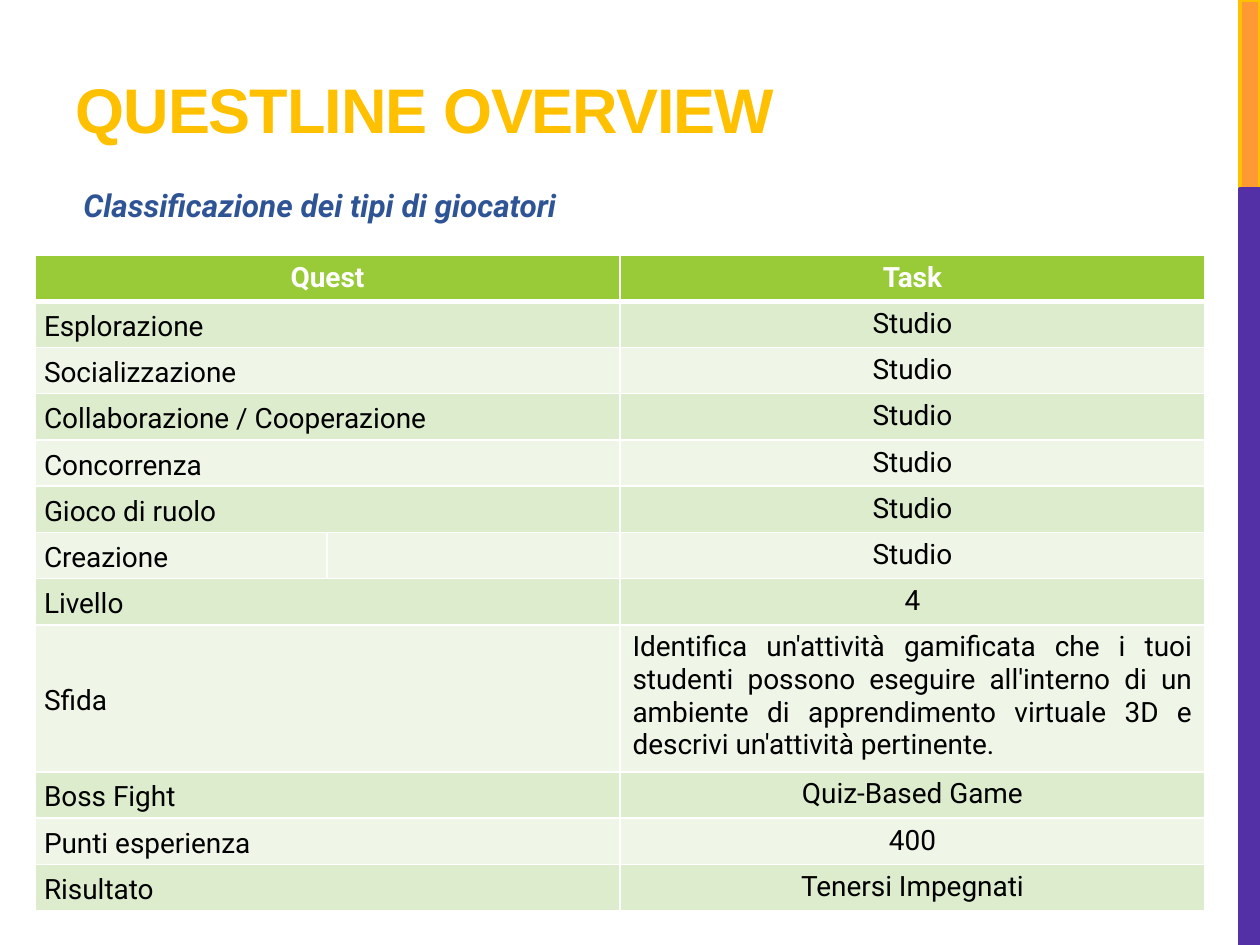
"""Build the questline overview slide with its quest and task table."""
from lxml import etree
from pptx import Presentation, util as u
from pptx.dml.color import RGBColor
from pptx.enum import shapes, text
from pptx.oxml.ns import qn

PX = 914400 // 126
GOLD = RGBColor(0xFF, 0xC0, 0x00)
ORANGE = RGBColor(0xFF, 0x99, 0x33)
PURPLE = RGBColor(0x53, 0x30, 0xA5)
NAVY = RGBColor(0x2F, 0x54, 0x96)
GREEN = RGBColor(0x99, 0xCB, 0x38)
BANDS = [RGBColor(0xEF, 0xF6, 0xE8), RGBColor(0xDE, 0xEC, 0xCE)]
WHITE = RGBColor(0xFF, 0xFF, 0xFF)
BLACK = RGBColor(0x00, 0x00, 0x00)

ROWS = [
    ("Quest", "Task"),
    ("Esplorazione", "Studio"),
    ("Socializzazione", "Studio"),
    ("Collaborazione / Cooperazione", "Studio"),
    ("Concorrenza", "Studio"),
    ("Gioco di ruolo", "Studio"),
    ("Creazione", "Studio"),
    ("Livello", "4"),
    ("Sfida", "Identifica un'attività gamificata che i tuoi studenti possono "
     "eseguire all'interno di un ambiente di apprendimento virtuale 3D e "
     "descrivi un'attività pertinente."),
    ("Boss Fight", "Quiz-Based Game"),
    ("Punti esperienza", "400"),
    ("Risultato", "Tenersi Impegnati"),
]
SPLIT_ROW, CHALLENGE_ROW = 6, 8


def write(p, words, color, **font):
    r = p.add_run()
    r.text = words
    r.font.color.rgb = color
    for name, value in font.items():
        setattr(r.font, name, value)
    return r


def add_border(cell, side, points):
    ln = etree.SubElement(cell._tc.get_or_add_tcPr(), qn(f"a:ln{side}"), w=str(u.Pt(points)))
    fill = etree.SubElement(ln, qn("a:solidFill"))
    etree.SubElement(fill, qn("a:srgbClr"), val=str(WHITE))


prs = Presentation()
prs.slide_width, prs.slide_height = 1260 * PX, 945 * PX
s = prs.slides.add_slide(prs.slide_layouts[5])

for top, height, fill, line in [(0, 189, ORANGE, GOLD), (189, 756, PURPLE, PURPLE)]:
    bar = s.shapes.add_shape(shapes.MSO_SHAPE.RECTANGLE, 1240 * PX, top * PX, 20 * PX, height * PX)
    bar.shadow.inherit = False
    bar.fill.solid()
    bar.fill.fore_color.rgb = fill
    bar.line.color.rgb = line
    bar.line.width = u.Pt(2.25)

title = s.shapes.title
title.left, title.top, title.width, title.height = [v * PX for v in (63, 21, 798, 131)]
tf = title.text_frame
tf.auto_size = text.MSO_AUTO_SIZE.NONE
tf.vertical_anchor = text.MSO_ANCHOR.BOTTOM
p = tf.paragraphs[0]
p.alignment = text.PP_ALIGN.LEFT
r = write(p, "QUESTLINE OVERVIEW", GOLD, name="Arial", size=u.Pt(36), bold=True)
r.font._element.set("spc", "-60")

sp = s.shapes.add_textbox(71 * PX, 161 * PX, 1099 * PX, 131 * PX)
sp.text_frame.word_wrap = True
p = sp.text_frame.paragraphs[0]
p.alignment = text.PP_ALIGN.LEFT
p.line_spacing = 1.5
p.space_after = u.Pt(6)
write(p, "Classificazione dei tipi di giocatori", NAVY,
      name="Roboto", size=u.Pt(18), bold=True, italic=True)

table = s.shapes.add_table(len(ROWS), 3, 35 * PX, 255 * PX, 1170 * PX, 655 * PX).table
for col, width in zip(table.columns, (292, 293, 585)):
    col.width = width * PX

for i, (quest, task) in enumerate(ROWS):
    header = i == 0
    table.rows[i].height = (134 if i == CHALLENGE_ROW else 43) * PX
    for j, words in enumerate((quest, "", task)):
        cell = table.cell(i, j)
        for side in "LRTB":
            thick = (i, side) in [(0, "B"), (1, "T")]
            add_border(cell, side, 3 if thick else 1)
        cell.fill.solid()
        cell.fill.fore_color.rgb = GREEN if header else BANDS[i % 2]
        p = cell.text_frame.paragraphs[0]
        p.alignment = text.PP_ALIGN.CENTER
        if j < 2 and not header:
            cell.vertical_anchor = text.MSO_ANCHOR.MIDDLE
            cell.margin_left = cell.margin_right = 9 * PX
            cell.margin_top = cell.margin_bottom = 0
        if j == 0 and not header:
            p.line_spacing = 1.15
            p.space_before = u.Pt(0)
            p.space_after = u.Pt(3)
        if not header and (j == 0 or i == CHALLENGE_ROW):
            p.alignment = text.PP_ALIGN.JUSTIFY
        if words:
            write(p, words, WHITE if header else BLACK,
                  name="Roboto", size=u.Pt(16), bold=header)
    if i != SPLIT_ROW:
        table.cell(i, 0).merge(table.cell(i, 1))

prs.save("out.pptx")
